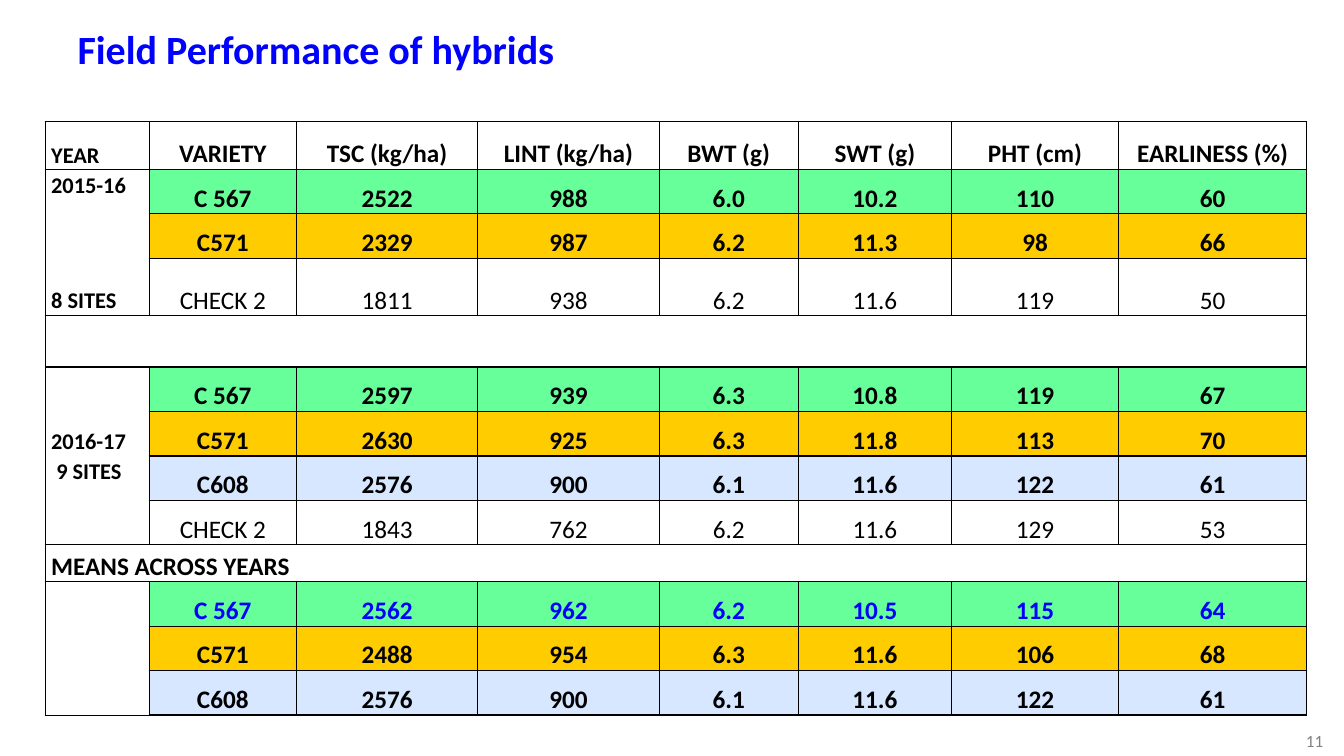
from lxml.etree import SubElement
from pptx import Presentation
from pptx.dml.color import RGBColor
from pptx.enum.text import MSO_ANCHOR, PP_ALIGN
from pptx.oxml import parse_xml
from pptx.oxml.ns import nsdecls
from pptx.util import Cm, Pt

BLACK = RGBColor(0x00, 0x00, 0x00)
BLUE = RGBColor(0x00, 0x00, 0xFF)
GREY = RGBColor(0x80, 0x80, 0x80)
GREEN = RGBColor(0x66, 0xFF, 0x99)
AMBER = RGBColor(0xFF, 0xCC, 0x00)
PALE_BLUE = RGBColor(0xD6, 0xE7, 0xFF)

HEADING = "Field Performance of hybrids"
PAGE = "11"
VARIETY_FILLS = {"C 567": GREEN, "C571": AMBER, "C608": PALE_BLUE}
HEADER = ["YEAR", "VARIETY", "TSC (kg/ha)", "LINT (kg/ha)", "BWT (g)",
          "SWT (g)", "PHT (cm)", "EARLINESS (%)"]
SEASON_1 = [
    ["C 567", "2522", "988", "6.0", "10.2", "110", "60"],
    ["C571", "2329", "987", "6.2", "11.3", "98", "66"],
    ["CHECK 2", "1811", "938", "6.2", "11.6", "119", "50"],
]
SEASON_2 = [
    ["C 567", "2597", "939", "6.3", "10.8", "119", "67"],
    ["C571", "2630", "925", "6.3", "11.8", "113", "70"],
    ["C608", "2576", "900", "6.1", "11.6", "122", "61"],
    ["CHECK 2", "1843", "762", "6.2", "11.6", "129", "53"],
]
MEANS = [
    ["C 567", "2562", "962", "6.2", "10.5", "115", "64"],
    ["C571", "2488", "954", "6.3", "11.6", "106", "68"],
    ["C608", "2576", "900", "6.1", "11.6", "122", "61"],
]
GROUPS = [
    (1, ["2015-16", "8 SITES"], SEASON_1),
    (5, ["2016-17", "9 SITES"], SEASON_2),
    (10, [], MEANS),
]
GAP_ROW, MEANS_ROW, LAST_ROW = 4, 9, 12
MEANS_LABEL = "MEANS ACROSS YEARS"
COLUMN_WIDTHS = [2.62, 3.71, 4.57, 4.57, 3.51, 3.86, 4.21, 4.74]
ROW_HEIGHTS = [1.2, 1.12, 1.12, 1.45, 1.29] + [1.12] * 4 + [0.93] + [1.12] * 3

CELL_FORMAT = {"margin_left": Cm(0.15), "margin_right": Cm(0.15),
               "margin_top": 0, "margin_bottom": 0,
               "vertical_anchor": MSO_ANCHOR.BOTTOM}
YEAR_FONT = {"name": "Calibri", "size": Pt(16), "bold": True}
VALUE_FONT = {**YEAR_FONT, "size": Pt(18)}
CHECK_FONT = {**VALUE_FONT, "bold": False}
TITLE_FONT = {**YEAR_FONT, "size": Pt(28.6)}
PAGE_FONT = {"name": "Calibri", "size": Pt(12.2), "bold": False}


def apply(target, settings):
    for attribute, value in settings.items():
        setattr(target, attribute, value)


def write(paragraph, text, font, color=BLACK, align=PP_ALIGN.LEFT):
    paragraph.alignment = align
    run = paragraph.add_run()
    run.text = text
    apply(run.font, font)
    run.font.color.rgb = color


def write_cell(cell, text, font, color=BLACK, align=PP_ALIGN.CENTER):
    paragraph = cell.text_frame.paragraphs[0]
    paragraph.line_spacing = 1.07
    write(paragraph, text, font, color, align)


def add_borders(cell, bottom):
    properties = cell._tc.get_or_add_tcPr()
    for index, (side, width) in enumerate(
            [("L", 1), ("R", 1), ("T", 1), ("B", bottom)]):
        border = parse_xml(f'<a:ln{side} {nsdecls("a")} w="{Pt(width)}"/>')
        solid = SubElement(border, border.tag.split("}")[0] + "}solidFill")
        SubElement(solid, border.tag.split("}")[0] + "}srgbClr", val=str(BLACK))
        properties.insert(index, border)


def add_heading(slide):
    title = slide.shapes.title
    apply(title, {"left": Cm(1.7), "top": Cm(0.46),
                  "width": Cm(23.6), "height": Cm(1.52)})
    title.text_frame.vertical_anchor = MSO_ANCHOR.MIDDLE
    write(title.text_frame.paragraphs[0], HEADING, TITLE_FONT, BLUE)


def add_page(slide):
    page = slide.shapes.add_textbox(Cm(31.62), Cm(18.16), Cm(1.98), Cm(1.02))
    apply(page.text_frame, {"word_wrap": True,
                            "vertical_anchor": MSO_ANCHOR.MIDDLE})
    write(page.text_frame.paragraphs[0], PAGE, PAGE_FONT, GREY, PP_ALIGN.RIGHT)


def add_results(slide):
    results = slide.shapes.add_table(
        len(ROW_HEIGHTS), len(COLUMN_WIDTHS), Cm(1.14), Cm(3.07),
        Cm(sum(COLUMN_WIDTHS)), Cm(sum(ROW_HEIGHTS))).table
    apply(results, {"first_row": False, "horz_banding": False})
    for column, width in zip(results.columns, COLUMN_WIDTHS):
        column.width = Cm(width)
    for index, (row, height) in enumerate(zip(results.rows, ROW_HEIGHTS)):
        row.height = Cm(height)
        for cell in row.cells:
            apply(cell, CELL_FORMAT)
            cell.fill.background()
            add_borders(cell, 2.25 if index == LAST_ROW else 1)

    write_cell(results.cell(0, 0), HEADER[0], YEAR_FONT, align=PP_ALIGN.LEFT)
    for column, label in enumerate(HEADER[1:], 1):
        write_cell(results.cell(0, column), label, VALUE_FONT)

    for first, season, records in GROUPS:
        year = results.cell(first, 0)
        year.merge(results.cell(first + len(records) - 1, 0))
        year.vertical_anchor = MSO_ANCHOR.MIDDLE
        for index, line in enumerate(season):
            if index:
                year.text_frame.add_paragraph()
            paragraph = year.text_frame.paragraphs[index]
            paragraph.line_spacing = 1.07
            write(paragraph, line, YEAR_FONT)
        for row, record in enumerate(records, first):
            fill = VARIETY_FILLS.get(record[0])
            color = BLUE if row == MEANS_ROW + 1 else BLACK
            for column, value in enumerate(record, 1):
                cell = results.cell(row, column)
                write_cell(cell, value, VALUE_FONT if fill else CHECK_FONT, color)
                if fill:
                    cell.fill.solid()
                    cell.fill.fore_color.rgb = fill

    results.cell(1, 0).text_frame.paragraphs[1].space_before = Pt(61)
    sites = results.cell(5, 0).text_frame.paragraphs[1]
    sites._p.get_or_add_pPr().set("marL", str(Cm(0.13)))
    for row in (GAP_ROW, MEANS_ROW):
        results.cell(row, 0).merge(results.cell(row, len(HEADER) - 1))
    write_cell(results.cell(MEANS_ROW, 0), MEANS_LABEL, VALUE_FONT,
               align=PP_ALIGN.LEFT)


def main():
    deck = Presentation()
    apply(deck, {"slide_width": Cm(33.87), "slide_height": Cm(19.05)})
    slide = deck.slides.add_slide(deck.slide_layouts[5])
    add_heading(slide)
    add_results(slide)
    add_page(slide)
    deck.save("out.pptx")


if __name__ == "__main__":
    main()
